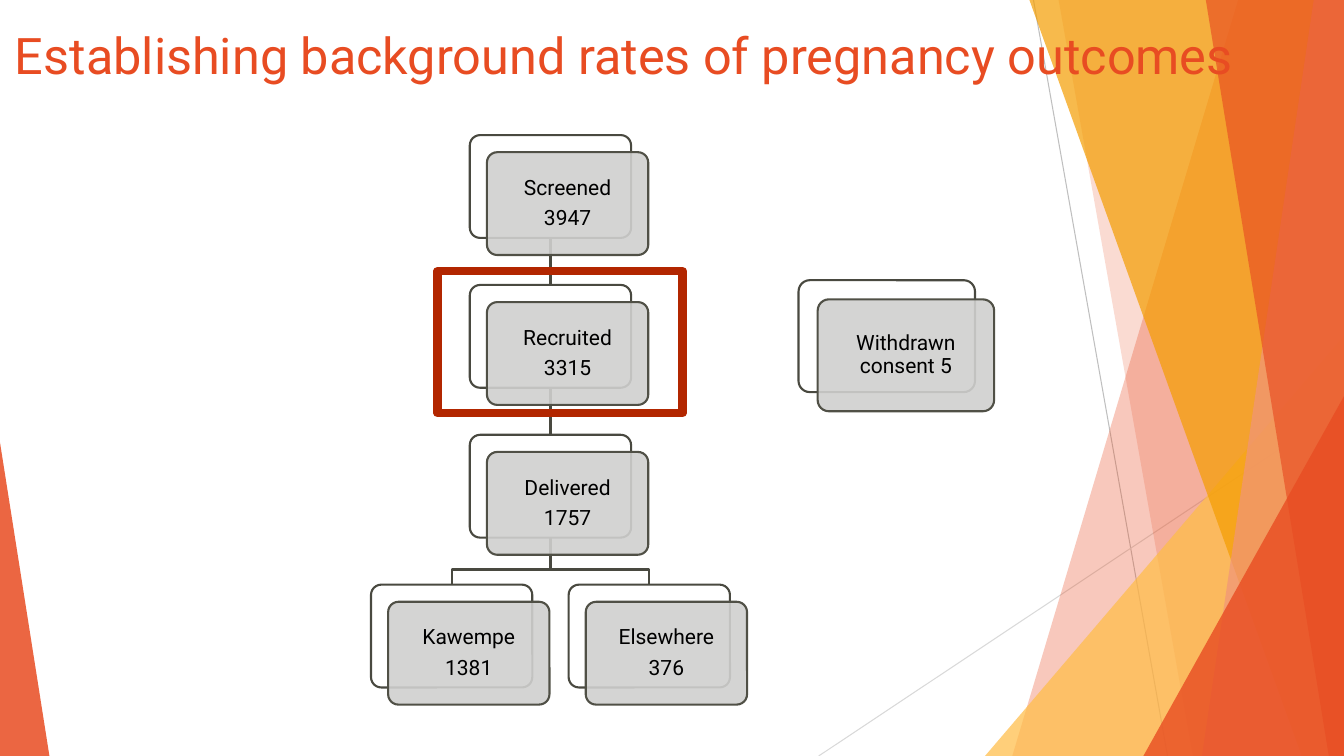
from dataclasses import dataclass

import lxml.etree
import pptx
import pptx.dml.color
import pptx.enum.shapes
import pptx.enum.text
import pptx.oxml.ns
import pptx.util

Inches = pptx.util.Inches
Shapes = pptx.enum.shapes.MSO_SHAPE
Point = tuple[float, float]

FONT = "Roboto"
ORANGE, LINE, FRONT_LINE = "E84C22", "494940", "505046"
WIDTH, HEIGHT = 13.33, 7.5


@dataclass
class Band:
    """A translucent polygon at the edge of the slide."""
    points: list[Point]
    colour: str
    opacity: int


@dataclass
class Corner:
    """A translucent right triangle standing on the bottom edge."""
    left: float
    top: float
    width: float
    apex: float
    colour: str
    opacity: int


@dataclass
class Card:
    """A labelled box in front of an offset white box."""
    lines: list[str]
    left: float
    top: float
    width: float = 1.6
    height: float = 1.02
    offset: float = 0.17


# Background
BANDS_BEHIND = [
    Band([(12.28, 0), (WIDTH, 0), (WIDTH, HEIGHT), (10.04, HEIGHT)], ORANGE, 30),
    Band([(10.5, 0), (WIDTH, 0), (WIDTH, HEIGHT), (11.83, HEIGHT)], ORANGE, 20),
]
BANDS_FRONT = [
    Band([(10.21, 0), (WIDTH, 0), (WIDTH, HEIGHT), (12.91, HEIGHT)], "F49D00", 70),
    Band([(13.03, 0), (WIDTH, 0), (WIDTH, HEIGHT), (11.92, HEIGHT)], "F1947A", 70),
    Band([(11.96, 0), (WIDTH, 0), (WIDTH, HEIGHT), (13.18, HEIGHT)], ORANGE, 65),
]
BACKGROUND = [
    *BANDS_BEHIND,
    Corner(9.77, 3.33, 3.56, 1, "FFBD47", 72),
    *BANDS_FRONT,
    Corner(11.34, 3.93, 1.99, 1, ORANGE, 80),
    Corner(0, 4.39, 0.49, 0, ORANGE, 85),
]

# Flow chart
FIRST_TOP, LAST_TOP = 1.34, 5.8
TRUNK_LEFT = 4.66
BRANCH_SHIFT = 0.98
ROW_TOPS = [FIRST_TOP + row * (LAST_TOP - FIRST_TOP) / 3 for row in range(4)]
TRUNK = [
    Card(lines, TRUNK_LEFT, top)
    for lines, top in zip(
        [["Screened", "3947"], ["Recruited", "3315"], ["Delivered", "1757"]], ROW_TOPS)
]
BRANCHES = [
    Card(["Kawempe", "1381"], TRUNK_LEFT - BRANCH_SHIFT, LAST_TOP),
    Card(["Elsewhere", "376"], TRUNK_LEFT + BRANCH_SHIFT, LAST_TOP),
]
WITHDRAWN = Card(["Withdrawn consent 5"], 7.92, 2.78, 1.75, 1.11, 0.19)


def rgb(colour: str) -> pptx.dml.color.RGBColor:
    return pptx.dml.color.RGBColor.from_string(colour)


def style(shape, fill: str | None = None, opacity: int = 100,
          line: str | None = None, weight: float = 1.5) -> None:
    shape.shadow.inherit = False
    if fill:
        shape.fill.solid()
        shape.fill.fore_color.rgb = rgb(fill)
        if opacity < 100:
            colour = shape.fill._xPr.find(".//" + pptx.oxml.ns.qn("a:srgbClr"))
            lxml.etree.SubElement(
                colour, pptx.oxml.ns.qn("a:alpha"), val=str(opacity * 1000))
    else:
        shape.fill.background()
    if line:
        shape.line.color.rgb = rgb(line)
        shape.line.width = pptx.util.Pt(weight)
    else:
        shape.line.fill.background()


def add_box(page, kind, left: float, top: float, width: float, height: float):
    return page.shapes.add_shape(
        kind, Inches(left), Inches(top), Inches(width), Inches(height))


def add_outline(page, points: list[Point], closed: bool):
    places = [(Inches(x), Inches(y)) for x, y in points]
    builder = page.shapes.build_freeform(*places[0], scale=1.0)
    builder.add_line_segments(places[1:], close=closed)
    return builder.convert_to_shape()


def add_line(page, start: Point, end: Point, colour: str, weight: float) -> None:
    line = page.shapes.add_connector(
        pptx.enum.shapes.MSO_CONNECTOR.STRAIGHT,
        *(Inches(value) for value in (*start, *end)))
    line.line.color.rgb = rgb(colour)
    line.line.width = pptx.util.Pt(weight)
    lxml.etree.SubElement(line._element.spPr, pptx.oxml.ns.qn("a:effectLst"))


def write(frame, lines: list[str], *, size: float, colour: str, align, anchor,
          spacing: float = 1.0, after: float = 0) -> None:
    frame.word_wrap = True
    frame.vertical_anchor = anchor
    for index, text in enumerate(lines):
        para = frame.paragraphs[0] if index == 0 else frame.add_paragraph()
        para.alignment = align
        para.line_spacing = spacing
        para.space_after = pptx.util.Pt(after)
        span = para.add_run()
        span.text = text
        span.font.name = FONT
        span.font.size = pptx.util.Pt(size)
        span.font.color.rgb = rgb(colour)


def add_background(page) -> None:
    add_line(page, (10.25, 0), (11.58, HEIGHT), "BFBFBF", 0.75)
    add_line(page, (WIDTH, 4.03), (8.12, HEIGHT), "D9D9D9", 0.75)
    for part in BACKGROUND:
        if isinstance(part, Band):
            shape = add_outline(page, part.points, closed=True)
        else:
            shape = add_box(page, Shapes.ISOSCELES_TRIANGLE, part.left, part.top,
                            part.width, HEIGHT - part.top)
            shape.adjustments[0] = part.apex
        style(shape, part.colour, part.opacity)


def add_card(page, card: Card) -> None:
    back, front = (
        add_box(page, Shapes.ROUNDED_RECTANGLE, card.left + shift, card.top + shift,
                card.width, card.height)
        for shift in (0, card.offset))
    for box in (back, front):
        box.adjustments[0] = 0.1
    style(back, "FFFFFF", line=LINE)
    style(front, "D0D0CF", 90, FRONT_LINE)
    frame = front.text_frame
    frame.margin_left = frame.margin_right = Inches(0.06)
    frame.margin_top = frame.margin_bottom = Inches(0.06)
    write(frame, card.lines, size=15, colour="000000", spacing=0.9, after=5.25,
          align=pptx.enum.text.PP_ALIGN.CENTER, anchor=pptx.enum.text.MSO_ANCHOR.MIDDLE)


def add_links(page) -> None:
    middle = TRUNK_LEFT + TRUNK[0].width / 2
    for upper, lower in zip(TRUNK, TRUNK[1:]):
        add_line(page, (middle, upper.top + upper.height), (middle, lower.top), LINE, 1.5)
    start = TRUNK[-1].top + TRUNK[-1].height
    knee = LAST_TOP - 0.15
    for branch in BRANCHES:
        end = branch.left + branch.width / 2
        link = add_outline(
            page, [(middle, start), (middle, knee), (end, knee), (end, LAST_TOP)],
            closed=False)
        style(link, line=LINE)


def main() -> None:
    deck = pptx.Presentation()
    deck.slide_width, deck.slide_height = Inches(WIDTH), Inches(HEIGHT)
    page = deck.slides.add_slide(deck.slide_layouts[6])
    add_background(page)

    # Title
    title = page.shapes.add_textbox(
        Inches(0.05), Inches(0.19), Inches(12.42), Inches(1.44))
    write(title.text_frame, ["Establishing background rates of pregnancy outcomes"],
          size=36, colour=ORANGE, align=pptx.enum.text.PP_ALIGN.LEFT,
          anchor=pptx.enum.text.MSO_ANCHOR.TOP)

    # Chart, with a frame around the recruited group
    add_links(page)
    for card in [*TRUNK, *BRANCHES, WITHDRAWN]:
        add_card(page, card)
    style(add_box(page, Shapes.RECTANGLE, 4.34, 2.69, 2.43, 1.41),
          line="B22600", weight=6)

    deck.save("out.pptx")


if __name__ == "__main__":
    main()
